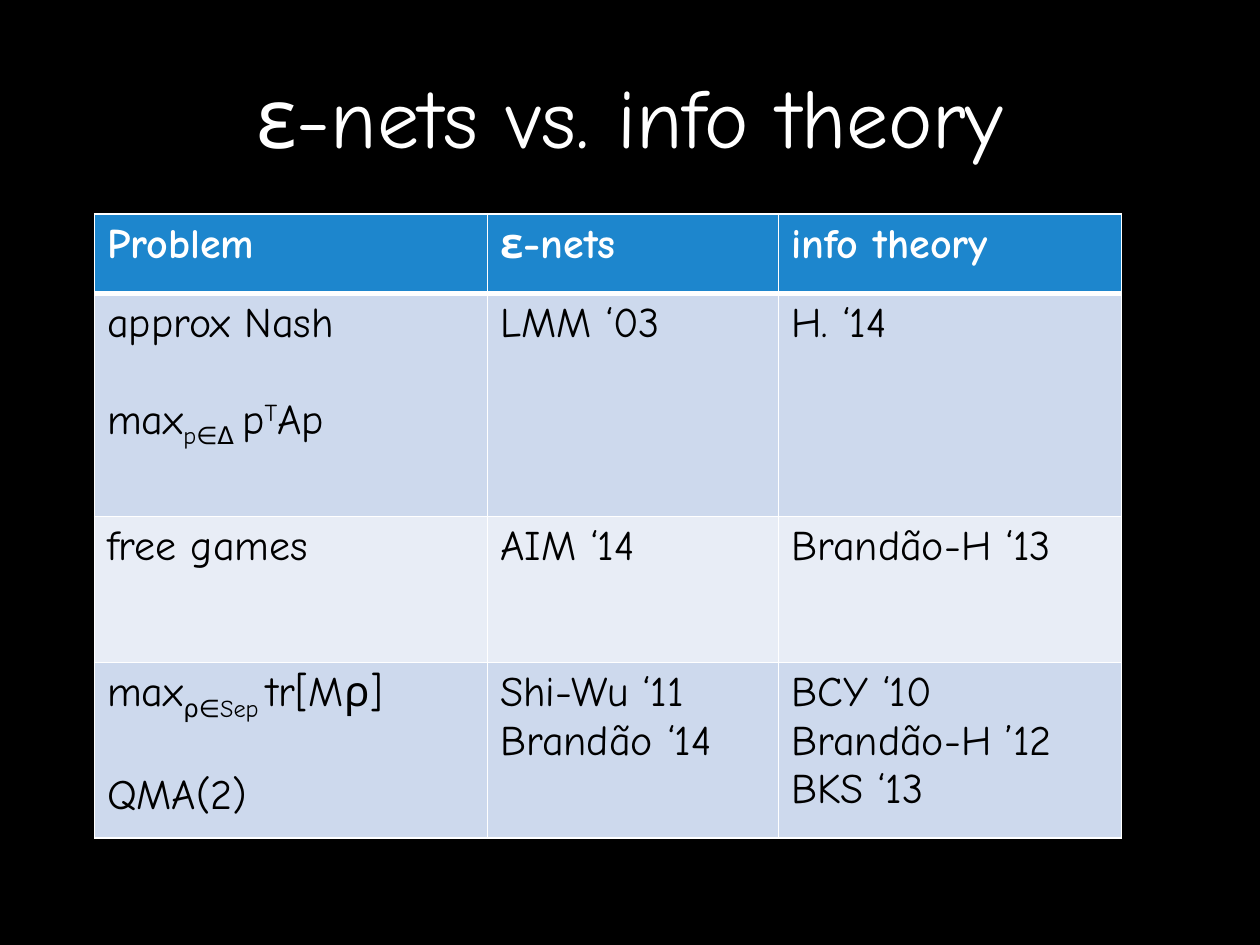
"""Build the slide comparing ε-nets with information theory."""
from lxml.etree import SubElement
from pptx import Presentation
from pptx.dml.color import RGBColor
from pptx.enum.text import MSO_ANCHOR, PP_ALIGN
from pptx.oxml.ns import qn
from pptx.util import Inches, Pt

COLORS = {"black": "000000", "white": "FFFFFF", "header": "1D86CD",
          "odd": "CDD9ED", "even": "E8EDF6"}
SUB, SUPER = "-25000", "30000"
GAP = Pt(27.7)


def set_font(paragraph, size, color, bold=False):
    font = paragraph.font
    font.name = "Comic Neue"
    font.size = Pt(size)
    font.bold = bold
    font.color.rgb = RGBColor.from_string(COLORS[color])


def add_border(cell, side, points):
    line = SubElement(cell._tc.get_or_add_tcPr(), qn(f"a:ln{side}"), w=str(Pt(points)))
    fill = SubElement(line, qn("a:solidFill"))
    SubElement(fill, qn("a:srgbClr"), val=COLORS["white"])


deck = Presentation()
deck.slide_width, deck.slide_height = Inches(10), Inches(7.5)
page = deck.slides.add_slide(deck.slide_layouts[6])
page.background.fill.solid()
page.background.fill.fore_color.rgb = RGBColor.from_string(COLORS["black"])

title = page.shapes.add_textbox(Inches(0.75), Inches(0.13), Inches(8.5), Inches(1.56))
title.text_frame.word_wrap = True
title.text_frame.vertical_anchor = MSO_ANCHOR.MIDDLE
heading = title.text_frame.paragraphs[0]
heading.text = "ε-nets vs. info theory"
heading.alignment = PP_ALIGN.CENTER
set_font(heading, 48, "white")

nash = [("max", None), ("p∈Δ ", SUB), ("p", None), ("T", SUPER), ("Ap", None)]
separable = [("max", None), ("ρ∈Sep ", SUB), ("tr[Mρ]", None)]
rows = [
    [["Problem"], ["ε-nets"], ["info theory"]],
    [["approx Nash", nash], ["LMM ‘03"], ["H. ‘14"]],
    [["free games"], ["AIM ‘14"], ["Brandão-H ‘13"]],
    [[separable, "QMA(2)"], ["Shi-Wu ‘11", "Brandão ‘14"],
     ["BCY ‘10", "Brandão-H ’12", "BKS ‘13"]],
]
widths = [3.12, 2.31, 2.72]
heights = [0.63, 1.77, 1.16, 1.39]
fills = ["header", "odd", "even", "odd"]

table = page.shapes.add_table(len(rows), len(widths), Inches(0.75), Inches(1.7),
                              Inches(sum(widths)), Inches(sum(heights))).table
for column, width in zip(table.columns, widths):
    column.width = Inches(width)
for row, height in zip(table.rows, heights):
    row.height = Inches(height)

for row_index, row in enumerate(rows):
    is_header = row_index == 0
    for column_index, lines in enumerate(row):
        cell = table.cell(row_index, column_index)
        for side in "LRTB":
            under_header = (row_index, side) in [(0, "B"), (1, "T")]
            add_border(cell, side, 3 if under_header else 1)
        cell.fill.solid()
        cell.fill.fore_color.rgb = RGBColor.from_string(COLORS[fills[row_index]])
        frame = cell.text_frame
        for line_index, line in enumerate(lines):
            para = frame.add_paragraph() if line_index else frame.paragraphs[0]
            if line_index and column_index == 0:
                para.space_before = GAP
            set_font(para, 24, "white" if is_header else "black", is_header)
            for text, baseline in [(line, None)] if isinstance(line, str) else line:
                span = para.add_run()
                span.text = text
                if baseline:
                    span.font._element.set("baseline", baseline)

deck.save("out.pptx")
